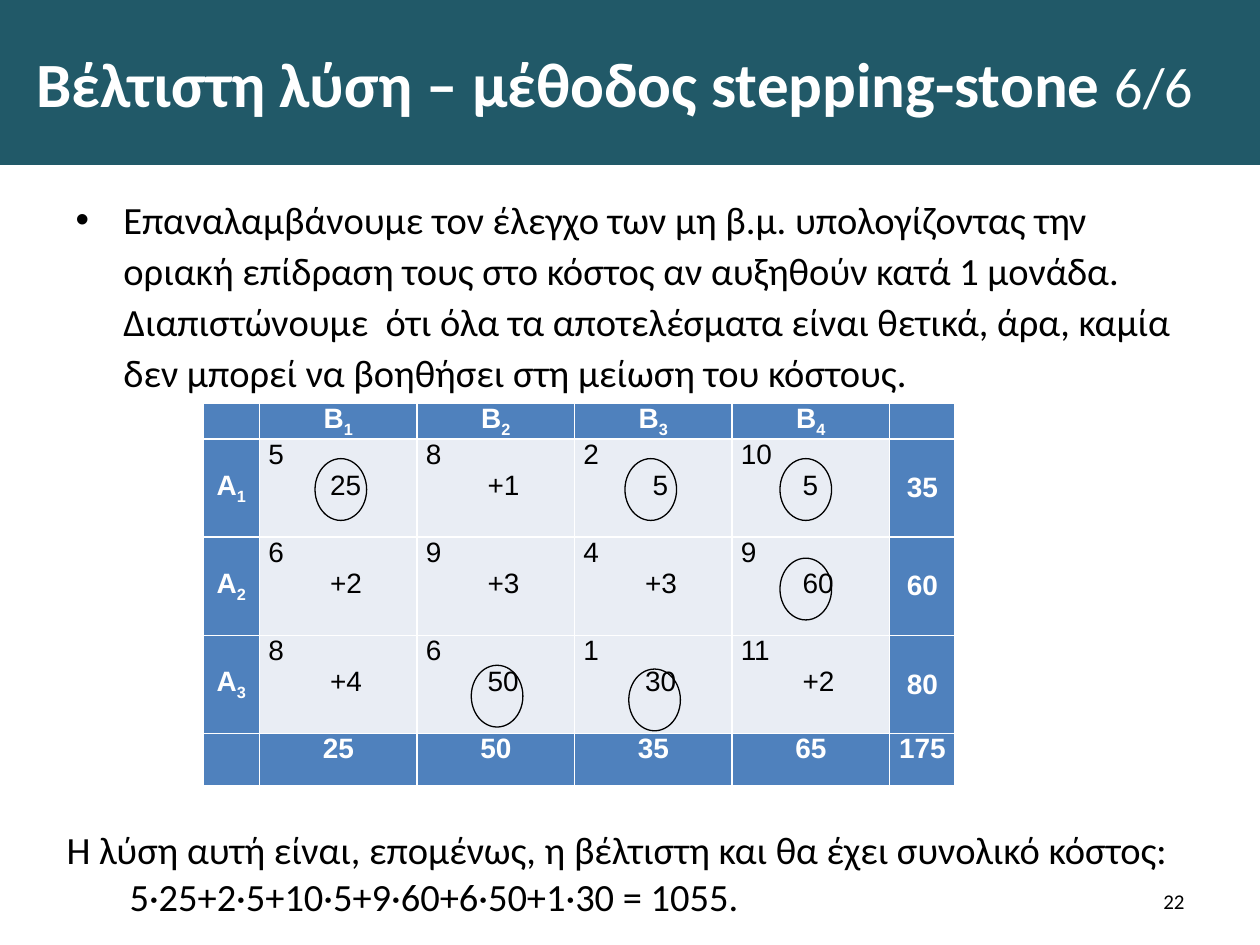
import pptx
import pptx.util
import pptx.dml.color
import pptx.enum.shapes
import pptx.enum.text
import lxml.etree

Inches = pptx.util.Inches
Pt = pptx.util.Pt
RGBColor = pptx.dml.color.RGBColor
ALIGN = pptx.enum.text.PP_ALIGN
ANCHOR = pptx.enum.text.MSO_ANCHOR

TEAL = RGBColor(0x21, 0x59, 0x68)
BLUE = RGBColor(0x4F, 0x81, 0xBD)
PALE = RGBColor(0xE9, 0xED, 0xF4)
WHITE = RGBColor(0xFF, 0xFF, 0xFF)
BLACK = RGBColor(0, 0, 0)

WIDTH, HEIGHT = 10, 7.5
TITLE = {"name": "Calibri", "size": Pt(36), "bold": True, "color": WHITE}
COUNTER = {**TITLE, "size": Pt(32), "bold": False}
TEXT = {"name": "Calibri", "size": Pt(22), "bold": False, "color": BLACK}
NUMBER = {**TEXT, "size": Pt(12)}
HEADING = {"name": "Arial", "size": Pt(16), "bold": True, "color": WHITE}
ENTRY = {**HEADING, "bold": False, "color": BLACK}

COLUMNS = [0.45, 1.25, 1.25, 1.25, 1.25, 0.52]
ROWS = [0.28, 0.78, 0.78, 0.78, 0.41]
DESTINATIONS = ["Β1", "Β2", "Β3", "Β4"]
SOURCES = ["Α1", "Α2", "Α3"]
SUPPLY = ["35", "60", "80"]
DEMAND = ["25", "50", "35", "65"]
COSTS = [["5", "8", "2", "10"], ["6", "9", "4", "9"], ["8", "6", "1", "11"]]
VALUES = [["25", "+1", "5", "5"], ["+2", "+3", "+3", "60"], ["+4", "50", "30", "+2"]]
CIRCLES = [(1, 1, 0.44, 0.16), (1, 3, 0.4, 0.16), (1, 4, 0.38, 0.16),
           (2, 4, 0.38, 0.17), (3, 2, 0.43, 0.24), (3, 3, 0.43, 0.27)]
CIRCLE_SIZE = (0.41, 0.49)


def place(shape, box):
    for name, value in zip(("left", "top", "width", "height"), box):
        setattr(shape, name, Inches(value))


def add_text(paragraph, text, style, baseline=None):
    run = paragraph.add_run()
    run.text = text
    for name, value in style.items():
        if name == "color":
            run.font.color.rgb = value
        else:
            setattr(run.font, name, value)
    if baseline:
        run.font._element.set("baseline", str(baseline))


def indent(paragraph, margin, first=0):
    properties = paragraph._p.get_or_add_pPr()
    properties.set("marL", str(Inches(margin)))
    properties.set("indent", str(Inches(first)))
    return properties


def format_frame(frame, anchor):
    settings = {"word_wrap": True, "vertical_anchor": anchor,
                "auto_size": pptx.enum.text.MSO_AUTO_SIZE.NONE}
    for name, value in settings.items():
        setattr(frame, name, value)


def fill_title(slide, box):
    title = slide.shapes.title
    place(title, box)
    title.fill.solid()
    title.fill.fore_color.rgb = TEAL
    format_frame(title.text_frame, ANCHOR.MIDDLE)
    paragraph = title.text_frame.paragraphs[0]
    paragraph.alignment = ALIGN.LEFT
    indent(paragraph, 0.19)
    add_text(paragraph, "Βέλτιστη λύση – μέθοδος stepping-stone ", TITLE)
    add_text(paragraph, "6/6", COUNTER)


def fill_body(slide, box):
    body = slide.placeholders[1]
    place(body, box)
    format_frame(body.text_frame, ANCHOR.TOP)
    paragraph = body.text_frame.paragraphs[0]
    properties = indent(paragraph, 0.38, -0.38)
    bullet = lxml.etree.SubElement(properties, pptx.oxml.ns.qn("a:buChar"))
    bullet.set("char", "•")
    paragraph.line_spacing = 1.1
    paragraph.space_before = Pt(0)
    add_text(paragraph, "Επαναλαμβάνουμε τον έλεγχο των μη β.μ. υπολογίζοντας την "
             "οριακή επίδραση τους στο κόστος αν αυξηθούν κατά 1 μονάδα. "
             "Διαπιστώνουμε  ότι όλα τα αποτελέσματα είναι θετικά, άρα, καμία "
             "δεν μπορεί να βοηθήσει στη μείωση του κόστους.", TEXT)


def fill_cell(cell, color, anchor):
    cell.fill.solid()
    cell.fill.fore_color.rgb = color
    settings = {"margin_left": Inches(0.07), "margin_right": Inches(0.07),
                "margin_top": 0, "margin_bottom": 0, "vertical_anchor": anchor}
    for name, value in settings.items():
        setattr(cell, name, value)
    return cell.text_frame.paragraphs[0]


def fill_heading(cell, text, anchor, subscript):
    paragraph = fill_cell(cell, BLUE, anchor)
    paragraph.alignment = ALIGN.CENTER
    if subscript:
        add_text(paragraph, text[:-1], HEADING)
        add_text(paragraph, text[-1], HEADING, -25000)
    else:
        add_text(paragraph, text, HEADING)


def fill_entry(cell, cost, value, margin):
    add_text(fill_cell(cell, PALE, ANCHOR.TOP), cost, ENTRY)
    paragraph = cell.text_frame.add_paragraph()
    indent(paragraph, margin)
    add_text(paragraph, value, ENTRY)


def add_transport_table(slide, left, top):
    frame = slide.shapes.add_table(len(ROWS), len(COLUMNS), Inches(left), Inches(top),
                                   Inches(sum(COLUMNS)), Inches(sum(ROWS)))
    table = frame.table
    flags = {"first_row": True, "last_row": True, "first_col": True,
             "last_col": True, "horz_banding": False}
    for name, value in flags.items():
        setattr(table, name, value)
    for column, width in zip(table.columns, COLUMNS):
        column.width = Inches(width)
    for row, height in zip(table.rows, ROWS):
        row.height = Inches(height)

    headings = [["", *DESTINATIONS, ""], ["", *DEMAND, "175"]]
    for row, texts in zip((0, len(ROWS) - 1), headings):
        for column, text in enumerate(texts):
            fill_heading(table.cell(row, column), text, ANCHOR.TOP, text in DESTINATIONS)
    for row, (source, supply) in enumerate(zip(SOURCES, SUPPLY), 1):
        fill_heading(table.cell(row, 0), source, ANCHOR.MIDDLE, True)
        fill_heading(table.cell(row, len(COLUMNS) - 1), supply, ANCHOR.MIDDLE, False)
        for column, (cost, value) in enumerate(zip(COSTS[row - 1], VALUES[row - 1]), 1):
            margin = 0.55 if (row, column) == (1, 3) else 0.49
            fill_entry(table.cell(row, column), cost, value, margin)

    for row, column, across, down in CIRCLES:
        circle = slide.shapes.add_shape(pptx.enum.shapes.MSO_SHAPE.OVAL, 0, 0, 0, 0)
        place(circle, (left + sum(COLUMNS[:column]) + across,
                       top + sum(ROWS[:row]) + down, *CIRCLE_SIZE))
        circle.shadow.inherit = False
        circle.fill.background()
        circle.line.color.rgb = BLACK
        circle.line.width = Pt(0.75)


def add_text_box(slide, box, lines, style, alignment, anchor):
    shape = slide.shapes.add_textbox(*[Inches(value) for value in box])
    frame = shape.text_frame
    format_frame(frame, anchor)
    for index, line in enumerate(lines):
        paragraph = frame.add_paragraph() if index else frame.paragraphs[0]
        paragraph.alignment = alignment
        add_text(paragraph, line, style)


def main():
    presentation = pptx.Presentation()
    presentation.slide_width = Inches(WIDTH)
    presentation.slide_height = Inches(HEIGHT)
    slide = presentation.slides.add_slide(presentation.slide_layouts[1])
    fill_title(slide, (0, 0, WIDTH, 1.31))
    fill_body(slide, (0.05 * WIDTH, 1.47, 0.9 * WIDTH, 2.36))
    add_text_box(slide, (7.17, 6.95, 2.33, 0.4), ["22"], NUMBER, ALIGN.RIGHT, ANCHOR.MIDDLE)
    add_transport_table(slide, 1.61, 3.2)
    add_text_box(slide, (0.43, 6.51, 8.98, 0.84),
                 ["Η λύση αυτή είναι, επομένως, η βέλτιστη και θα έχει συνολικό κόστος:",
                  "\t5·25+2·5+10·5+9·60+6·50+1·30 = 1055."], TEXT, ALIGN.LEFT, ANCHOR.TOP)
    presentation.save("out.pptx")


if __name__ == "__main__":
    main()
